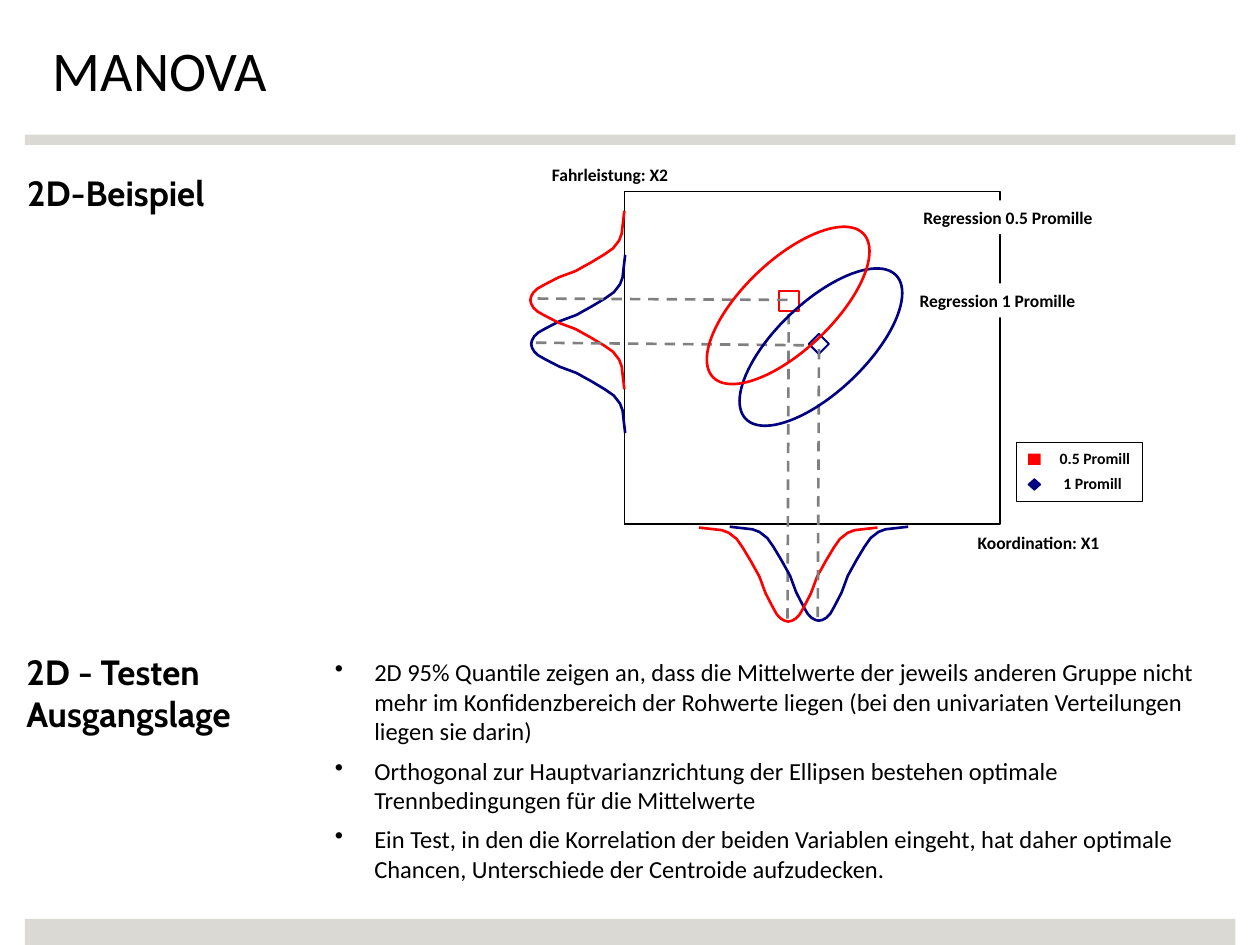
"""Build the MANOVA slide with its two-group example plot and notes."""
from lxml.etree import SubElement
from pptx import Presentation
from pptx.dml.color import RGBColor
from pptx.enum.dml import MSO_LINE
from pptx.enum.shapes import MSO_CONNECTOR, MSO_SHAPE
from pptx.enum.text import MSO_ANCHOR, MSO_AUTO_SIZE, PP_ALIGN
from pptx.oxml.ns import qn
from pptx.util import Pt

RECT, OVAL, RHOMB = MSO_SHAPE.RECTANGLE, MSO_SHAPE.OVAL, MSO_SHAPE.DIAMOND
STRAIGHT, DASH = MSO_CONNECTOR.STRAIGHT, MSO_LINE.DASH
LEFT, TOP, FIXED = PP_ALIGN.LEFT, MSO_ANCHOR.TOP, MSO_AUTO_SIZE.NONE

INK = {"black": "000000", "white": "FFFFFF", "band": "DAD9D3",
       "red": "FF0000", "navy": "000080", "gray": "808080"}

HALF = [(51, 0), (45, 0.7), (38, 1.5), (34, 3), (29.5, 6.5), (26, 11.5),
        (21.5, 19), (16.5, 28), (13, 37.5), (10.8, 41.8), (8.6, 46),
        (6.5, 49.7), (4.3, 52), (2, 53.3), (0, 53.7)]
BELL = [(-x, d) for x, d in HALF] + HALF[-2::-1]

NOTES = [
    "2D 95% Quantile zeigen an, dass die Mittelwerte der jeweils anderen "
    "Gruppe nicht mehr im Konfidenzbereich der Rohwerte liegen (bei den "
    "univariaten Verteilungen liegen sie darin)",
    "Orthogonal zur Hauptvarianzrichtung der Ellipsen bestehen optimale "
    "Trennbedingungen für die Mittelwerte",
    "Ein Test, in den die Korrelation der beiden Variablen eingeht, hat "
    "daher optimale Chancen, Unterschiede der Centroide aufzudecken.",
]


def color(name):
    """Return the named colour."""
    return RGBColor.from_string(INK[name])


def paint(shape, fill=None, line=None, width=0):
    """Set fill and outline, and drop the shadow."""
    shape.shadow.inherit = False
    if fill:
        shape.fill.solid()
        shape.fill.fore_color.rgb = color(fill)
    else:
        shape.fill.background()
    if line:
        shape.line.color.rgb = color(line)
        shape.line.width = Pt(width)
    else:
        shape.line.fill.background()


def shape(slide, kind, box, turn=0, **style):
    """Add a preset shape."""
    item = slide.shapes.add_shape(kind, *map(Pt, box))
    item.rotation = turn
    paint(item, **style)


def curve(slide, points, **style):
    """Add an open outline through the points."""
    spots = [(Pt(x), Pt(y)) for x, y in points]
    pen = slide.shapes.build_freeform(*spots[0])
    pen.add_line_segments(spots[1:], close=False)
    paint(pen.convert_to_shape(), **style)


def guide(slide, *ends):
    """Add a dashed gray line."""
    item = slide.shapes.add_connector(STRAIGHT, *map(Pt, ends))
    item.line.color.rgb = color("gray")
    item.line.width = Pt(1.5)
    item.line.dash_style = DASH
    SubElement(item._element.spPr, qn("a:effectLst"))


def bullet(para):
    """Give the paragraph a hanging bullet."""
    props = para._p.get_or_add_pPr()
    props.set("marL", str(Pt(22.5)))
    props.set("indent", str(-Pt(22.5)))
    SubElement(props, qn("a:buChar")).set("char", "•")


def write(frame, texts, size=10, font="Calibri", bold=False, wrap=True,
          inset=True, dots=False, gap=0):
    """Fill a text frame with one paragraph for each text."""
    frame.word_wrap = wrap
    frame.auto_size = FIXED
    frame.vertical_anchor = TOP
    if not inset:
        frame.margin_left = frame.margin_right = 0
        frame.margin_top = frame.margin_bottom = 0
    for i, text in enumerate(texts):
        para = frame.add_paragraph() if i else frame.paragraphs[0]
        para.alignment = LEFT
        if i:
            para.space_before = Pt(gap)
        if dots:
            bullet(para)
        run = para.add_run()
        run.text = text
        run.font.size = Pt(size)
        run.font.name = font
        run.font.bold = bold
        run.font.color.rgb = color("black")


def label(slide, box, *texts, fill=None, **form):
    """Add a text box."""
    item = slide.shapes.add_textbox(*map(Pt, box))
    if fill:
        item.fill.solid()
        item.fill.fore_color.rgb = color(fill)
    write(item.text_frame, texts, **form)


def title(slide, text):
    """Place and fill the title."""
    item = slide.shapes.title
    item.left, item.top, item.width, item.height = map(
        Pt, (23, 16.5, 487.5, 46))
    write(item.text_frame, [text], size=32)


def bells(slide, ink, x, y, base, side):
    """Draw the marginal curves below and left of the plot."""
    curve(slide, [(x + t, base + d) for t, d in BELL], line=ink, width=1.5)
    curve(slide, [(side - d, y + t) for t, d in BELL], line=ink, width=1.5)


def plot(slide):
    """Draw the frame, marks, guides, curves and ellipses."""
    shape(slide, RECT, (357, 109.5, 214.5, 190), line="black")
    curve(slide, [(357, 109.5), (357, 299.5), (571.5, 299.5)], line="black")
    tag = {"bold": True, "wrap": False}
    label(slide, (558.7, 303.8, 80.6, 12.2), "Koordination: X1",
          inset=False, **tag)
    label(slide, (315.4, 93.6, 78.5, 12.2), "Fahrleistung: X2",
          inset=False, **tag)
    label(slide, (518.4, 162, 113.8, 19.4), "Regression 1 Promille",
          fill="white", **tag)
    label(slide, (520.6, 114.5, 121.7, 19.4), "Regression 0.5 Promille",
          fill="white", **tag)
    shape(slide, RHOMB, (462.2, 190.8, 11.5, 11.5), line="navy", width=1.13)
    shape(slide, RECT, (445, 166.3, 11.5, 11.5), line="red", width=1.25)
    guide(slide, 450.7, 179.3, 450, 357.8)
    bells(slide, "navy", 468, 196.6, 301, 357.3)
    bells(slide, "red", 450.5, 171.5, 301.5, 356.8)
    guide(slide, 468, 199.4, 467.3, 352.8)
    guide(slide, 450, 171.4, 305.3, 170.6)
    guide(slide, 459.4, 197.3, 302.4, 195.8)
    for ink, x, y in (("navy", 409.7, 172.8), ("red", 391, 149)):
        shape(slide, OVAL, (x, y, 118.8, 51.1), turn=316.4,
              line=ink, width=1.5)


def legend(slide):
    """Draw the key to the two groups."""
    shape(slide, RECT, (581, 252.7, 72, 33.8), fill="white", line="black")
    shape(slide, RECT, (587.5, 259.2, 7.2, 6.5), fill="red")
    shape(slide, RHOMB, (587.5, 273.6, 7.2, 6.5), fill="navy",
          line="navy", width=0.63)
    for text, x, y, w in (("0.5 Promill", 605.5, 256.3, 45.4),
                          ("1 Promill", 607.7, 270.7, 38.2)):
        label(slide, (x, y, w, 10.8), text, size=9, bold=True,
              wrap=False, inset=False)


def main():
    """Build and save the slide."""
    deck = Presentation()
    deck.slide_width, deck.slide_height = Pt(720), Pt(540)
    slide = deck.slides.add_slide(deck.slide_layouts[5])
    title(slide, "MANOVA")
    for y, h in ((77, 5.8), (525, 15)):
        shape(slide, RECT, (14.2, y, 691.8, h), fill="band")
    head = {"size": 20, "font": "Cabin", "bold": True}
    label(slide, (8.4, 94.3, 167, 31), "2D-Beispiel", **head)
    label(slide, (8, 368, 167, 55.4), "2D - Testen Ausgangslage", **head)
    label(slide, (184.3, 372.2, 525.6, 139.7), *NOTES, size=14,
          dots=True, gap=5.6)
    plot(slide)
    legend(slide)
    deck.save("out.pptx")


if __name__ == "__main__":
    main()
